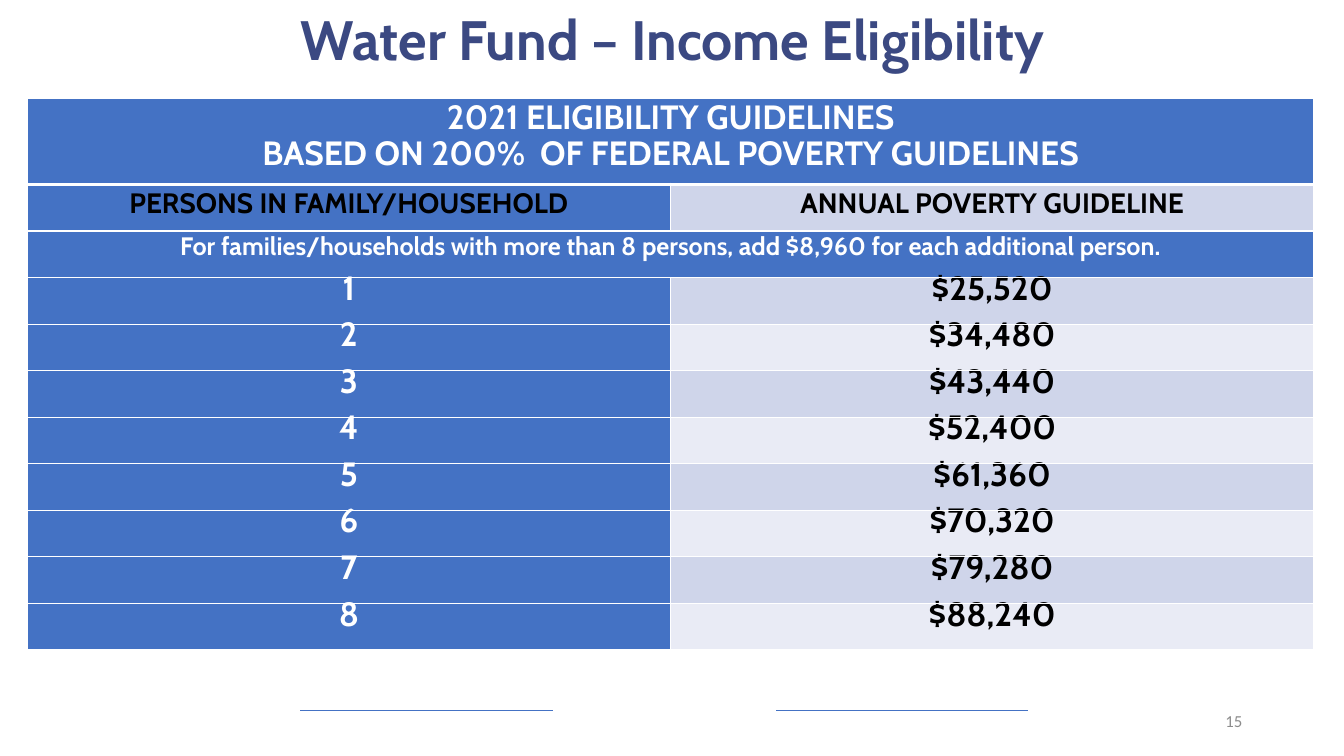
from lxml.etree import SubElement
from pptx import Presentation
from pptx.dml.color import RGBColor
from pptx.enum.shapes import MSO_CONNECTOR
from pptx.enum.text import MSO_ANCHOR, PP_ALIGN
from pptx.oxml.ns import qn
from pptx.util import Inches, Pt

BLUE, WHITE, BLACK = "4472C4", "FFFFFF", "000000"
BANDS = ["CFD5EA", "E9EBF5"]
INCOMES = ["$25,520", "$34,480", "$43,440", "$52,400",
           "$61,360", "$70,320", "$79,280", "$88,240"]


def color(hex_text):
    return RGBColor.from_string(hex_text)


def add_run(paragraph, text, size, hex_text, bold=True, font="Cabin"):
    run = paragraph.add_run()
    run.text = text
    run.font.name = font
    run.font.size = Pt(size)
    run.font.bold = bold
    run.font.color.rgb = color(hex_text)


def add_text(slide, left, top, width, height, text, alignment, **style):
    box = slide.shapes.add_textbox(Inches(left), Inches(top), Inches(width), Inches(height))
    frame = box.text_frame
    frame.word_wrap = True
    frame.vertical_anchor = MSO_ANCHOR.MIDDLE
    paragraph = frame.paragraphs[0]
    paragraph.alignment = alignment
    add_run(paragraph, text, **style)
    return paragraph


def set_borders(cell, widths):
    properties = cell._tc.get_or_add_tcPr()
    for side, width in zip(("lnL", "lnR", "lnT", "lnB"), widths):
        line = SubElement(properties, qn(f"a:{side}"), w=str(Pt(width)))
        SubElement(SubElement(line, qn("a:solidFill")), qn("a:srgbClr"), val=WHITE)


def style_cell(cell, fill, row):
    set_borders(cell, (1, 1, 3 if row == 1 else 1, 3 if row == 0 else 1))
    cell.fill.solid()
    cell.fill.fore_color.rgb = color(fill)
    cell.margin_left = cell.margin_right = Inches(0.1)
    cell.margin_top = cell.margin_bottom = Inches(0.1)
    cell.vertical_anchor = MSO_ANCHOR.BOTTOM if row < 2 else MSO_ANCHOR.TOP


def fill_cell(cell, lines, size, hex_text):
    frame = cell.text_frame
    for index, text in enumerate(lines):
        paragraph = frame.add_paragraph() if index else frame.paragraphs[0]
        paragraph.alignment = PP_ALIGN.CENTER
        paragraph.line_spacing = Pt(15)
        paragraph.space_after = Pt(11.2)
        add_run(paragraph, text, size, hex_text)


def add_income_table(slide, left, top, width, height):
    row_count = len(INCOMES) + 3
    heading_height = 0.85
    row_height = (height - heading_height) / (row_count - 1)
    table = slide.shapes.add_table(row_count, 2, Inches(left), Inches(top),
                                   Inches(width), Inches(height)).table
    for column in table.columns:
        column.width = Inches(width / 2)
    for row, table_row in enumerate(table.rows):
        table_row.height = Inches(row_height if row else heading_height)
        for column, cell in enumerate(table_row.cells):
            is_blue = column == 0 or row in (0, 2)
            style_cell(cell, BLUE if is_blue else BANDS[(row + 1) % 2], row)

    # Full-width heading and note
    for row in (0, 2):
        table.cell(row, 0).merge(table.cell(row, 1))
    fill_cell(table.cell(0, 0), ["2021 ELIGIBILITY GUIDELINES",
                                 "BASED ON 200%  OF FEDERAL POVERTY GUIDELINES"], 24, WHITE)
    fill_cell(table.cell(2, 0), ["For families/households with more than 8 persons, "
                                 "add $8,960 for each additional person."], 18, WHITE)

    # Column labels
    for column, label in enumerate(["PERSONS IN FAMILY/HOUSEHOLD", "ANNUAL POVERTY GUIDELINE"]):
        fill_cell(table.cell(1, column), [label], 20, BLACK)

    # Household sizes and incomes
    for persons, income in enumerate(INCOMES, start=1):
        fill_cell(table.cell(persons + 2, 0), [str(persons)], 24, WHITE)
        fill_cell(table.cell(persons + 2, 1), [income], 24, BLACK)


def add_footer(slide, top, page_number):
    for left in (2.98, 7.7):
        rule = slide.shapes.add_connector(MSO_CONNECTOR.STRAIGHT, Inches(left), Inches(top + 0.1),
                                          Inches(left + 2.5), Inches(top + 0.1))
        rule.line.color.rgb = color(BLUE)
        rule.line.width = Pt(0.5)
        SubElement(rule._element.spPr, qn("a:effectLst"))
    add_text(slide, 9.42, top, 3, 0.4, page_number, PP_ALIGN.RIGHT,
             size=12, hex_text="8C8C8C", bold=False, font="Calibri")


def main():
    presentation = Presentation()
    presentation.slide_width = Inches(13.33)
    presentation.slide_height = Inches(7.5)
    slide = presentation.slides.add_slide(presentation.slide_layouts[6])
    title = add_text(slide, 0.92, 0.15, 11.5, 0.54, "Water Fund – Income Eligibility",
                     PP_ALIGN.CENTER, size=39.6, hex_text="3B4982")
    title.line_spacing = 0.9
    add_income_table(slide, 0.27, 0.98, 12.76, 5.47)
    add_footer(slide, 6.95, "15")
    presentation.save("out.pptx")


if __name__ == "__main__":
    main()
